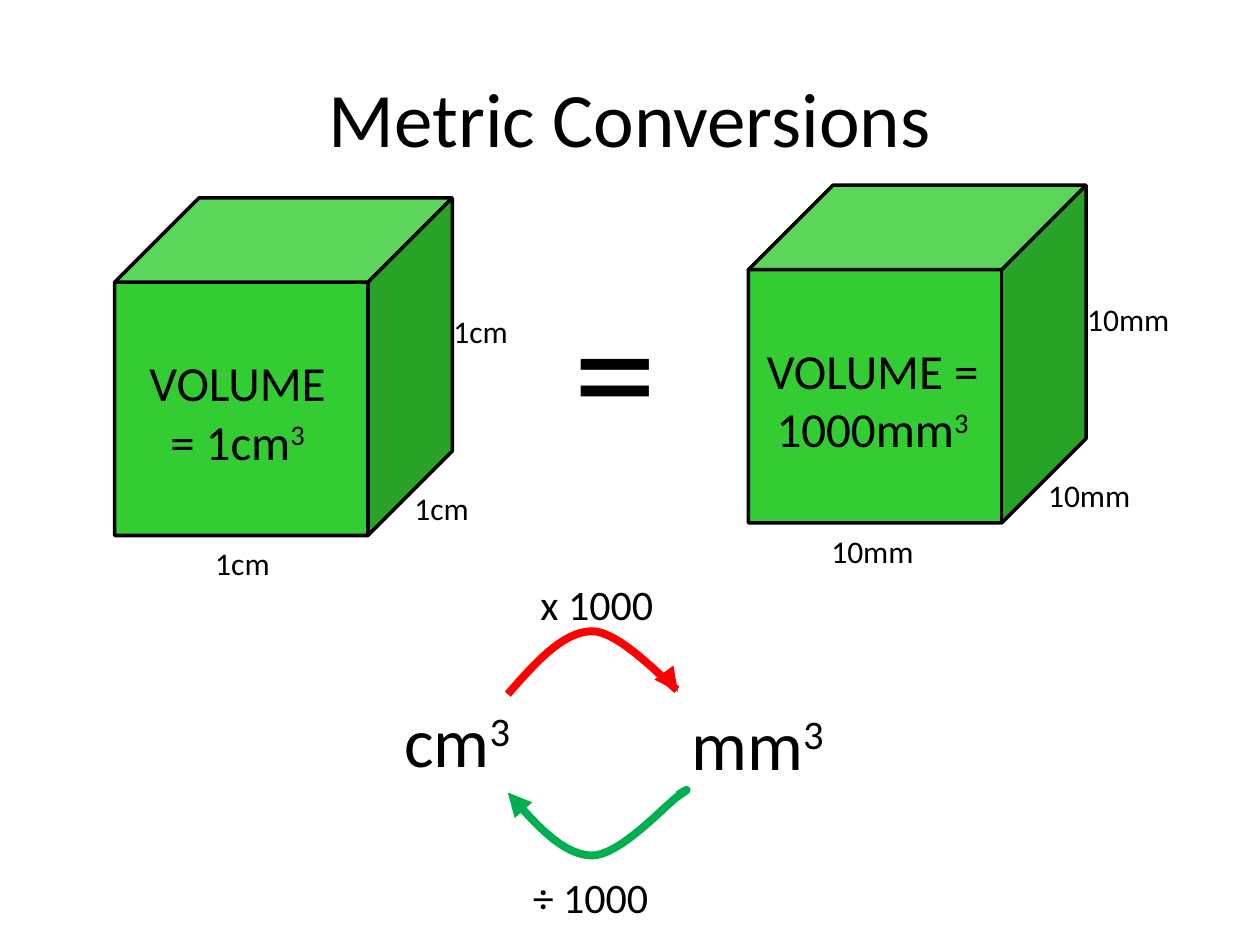
from lxml import etree
from pptx import Presentation
from pptx import util as u
from pptx.dml.color import RGBColor
from pptx.enum import shapes, text
from pptx.oxml import ns

COLORS = {"ink": "000000", "cube": "33CC33", "multiply": "FF0000", "divide": "00B050"}
FONT = "Calibri"
CUBE_SIZE = 2.68
ARC_START = (0, 0.5)
ARC_CURVES = [
    [(0.22, 0.25), (0.43, 0.01), (0.66, 0)],
    [(0.88, -0.01), (1.24, 0.39), (1.35, 0.47)],
    [(1.47, 0.55), (1.41, 0.52), (1.35, 0.48)],
]
ARC_STEPS = 16


def color(name):
    """Return the named colour."""
    return RGBColor.from_string(COLORS[name])


def add_text(slide, box, words, size, centered=False, power=None):
    """Add a text box, with an optional raised power after the words."""
    shape = slide.shapes.add_textbox(*map(u.Inches, box))
    frame = shape.text_frame
    frame.word_wrap = True
    paragraph = frame.paragraphs[0]
    paragraph.add_run().text = words
    if power:
        run = paragraph.add_run()
        run.text = power
        run.font._element.set("baseline", "30000")
    paragraph.font.name = FONT
    paragraph.font.size = u.Pt(size)
    paragraph.font.color.rgb = color("ink")
    if centered:
        paragraph.alignment = text.PP_ALIGN.CENTER
    return shape


def add_title(slide, box, words):
    """Add the slide title, centred in its box."""
    title = add_text(slide, box, words, 44, centered=True)
    title.text_frame.vertical_anchor = text.MSO_ANCHOR.MIDDLE


def add_cube(slide, box, edge, edge_width, bottom_offset, volume, volume_box):
    """Add a cube with its volume and its three edge lengths."""
    left, top, width, height = box
    cube = slide.shapes.add_shape(shapes.MSO_SHAPE.CUBE, *map(u.Inches, box))
    cube.shadow.inherit = False
    cube.fill.solid()
    cube.fill.fore_color.rgb = color("cube")
    cube.line.color.rgb = color("ink")
    cube.line.width = u.Pt(2)
    for x, y in [(bottom_offset, 2.7), (2.28, 2.26), (2.59, 0.86)]:
        add_text(slide, (left + x, top + y, edge_width, 0.4), edge, 18)
    x, volume_width = volume_box
    add_text(slide, (left + x, top + 1.18, volume_width, 1.04), volume, 28, True, "3")


def arc_points():
    """Return points along the arc, relative to its top left corner."""
    points = [ARC_START]
    for first, second, end in ARC_CURVES:
        start = points[-1]
        for step in range(1, ARC_STEPS + 1):
            t = step / ARC_STEPS
            weights = ((1 - t) ** 3, 3 * t * (1 - t) ** 2, 3 * t * t * (1 - t), t**3)
            corners = (start, first, second, end)
            points.append(tuple(
                sum(weight * corner[axis] for weight, corner in zip(weights, corners))
                for axis in (0, 1)
            ))
    return points


def add_arc(slide, box, color_name, arrow_end, flipped=False):
    """Add a curved arrow, turned upside down when flipped."""
    left, top, _, height = box
    points = [
        (u.Inches(left + x), u.Inches(top + (height - y if flipped else y)))
        for x, y in arc_points()
    ]
    builder = slide.shapes.build_freeform(*points[0])
    builder.add_line_segments(points[1:], close=False)
    arc = builder.convert_to_shape()
    arc.shadow.inherit = False
    arc.fill.background()
    arc.line.color.rgb = color(color_name)
    arc.line.width = u.Pt(4.5)
    line = arc.line._get_or_add_ln()
    etree.SubElement(line, ns.qn(f"a:{arrow_end}")).set("type", "triangle")


def add_conversion(slide, box):
    """Add the two units with the arrows and factors between them."""
    left, top, _, _ = box
    add_text(slide, (left, top + 0.95, 1.73, 0.77), "cm", 40, power="3")
    add_text(slide, (left + 2.28, top + 0.97, 1.73, 0.77), "mm", 40, power="3")
    add_arc(slide, (left + 0.92, top + 0.47, 1.42, 0.52), "multiply", "tailEnd")
    add_arc(slide, (left + 0.92, top + 1.73, 1.42, 0.52), "divide", "headEnd", True)
    add_text(slide, (left + 1.08, top, 1.18, 0.5), "x 1000", 24)
    add_text(slide, (left + 1.02, top + 2.33, 1.18, 0.5), "÷ 1000", 24)


def main():
    """Build and save the metric conversions slide."""
    presentation = Presentation()
    presentation.slide_width = u.Inches(10)
    presentation.slide_height = u.Inches(7.5)
    slide = presentation.slides.add_slide(presentation.slide_layouts[6])
    add_title(slide, (0.5, 0.3, 9, 1.25), "Metric Conversions")
    add_cube(slide, (0.91, 1.57, CUBE_SIZE, CUBE_SIZE), "1cm", 0.79, 0.7,
             "VOLUME = 1cm", (0.07, 1.81))
    add_cube(slide, (5.94, 1.47, CUBE_SIZE, CUBE_SIZE), "10mm", 0.94, 0.56,
             "VOLUME = 1000mm", (0, 1.97))
    add_text(slide, (4.45, 2.04, 0.94, 1.72), "=", 96)
    add_conversion(slide, (3.11, 4.54, 4.01, 2.83))
    presentation.save("out.pptx")


if __name__ == "__main__":
    main()
